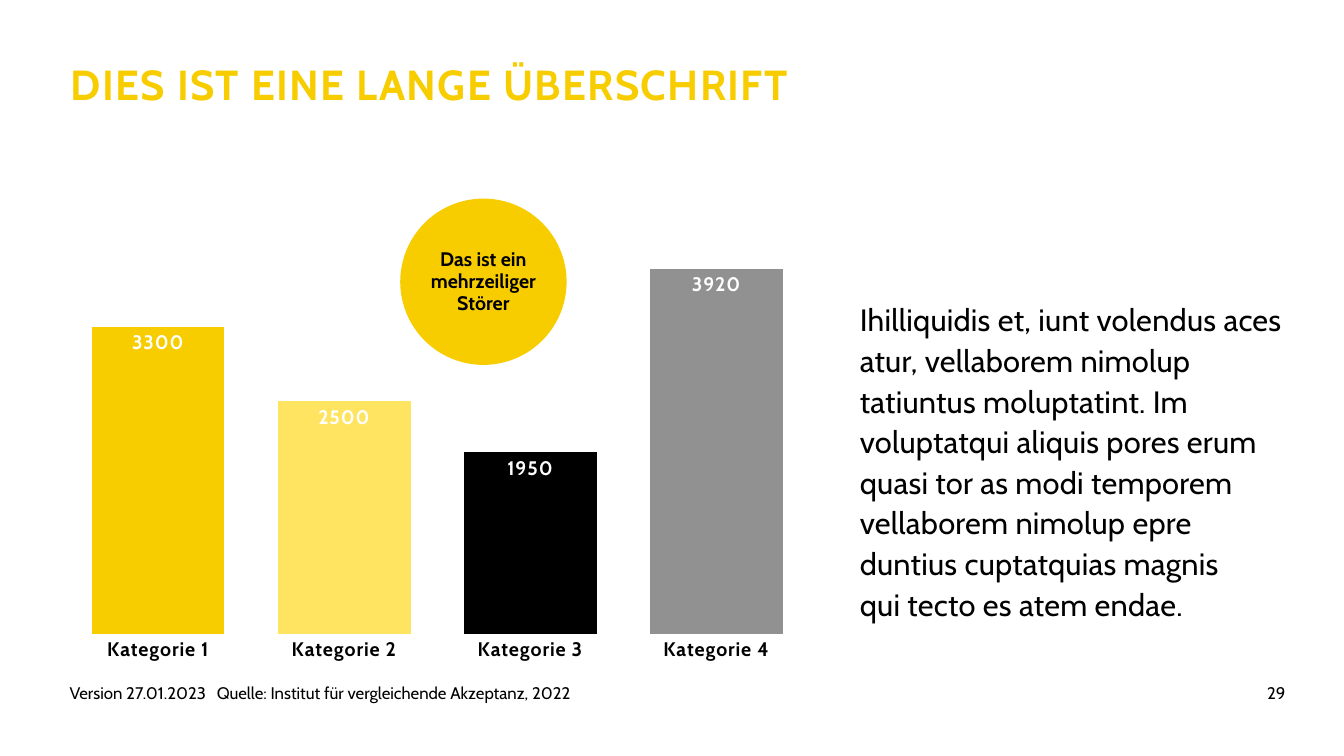
"""Build a slide with a column chart, a round callout and a text column."""
from lxml.etree import SubElement
from pptx import Presentation
from pptx.chart.data import CategoryChartData
from pptx.dml.color import RGBColor
from pptx.enum.chart import XL_CHART_TYPE, XL_LABEL_POSITION, XL_TICK_MARK
from pptx.enum.shapes import MSO_SHAPE
from pptx.enum.text import MSO_ANCHOR, MSO_AUTO_SIZE, PP_ALIGN
from pptx.oxml import parse_xml
from pptx.oxml.ns import nsdecls, qn
from pptx.util import Inches, Pt

YELLOW = RGBColor(0xF7, 0xCD, 0x00)
PALE = RGBColor(0xFF, 0xE4, 0x61)
BLACK = RGBColor(0x00, 0x00, 0x00)
GREY = RGBColor(0x91, 0x91, 0x91)
WHITE = RGBColor(0xFF, 0xFF, 0xFF)
FONT = "Cabin"
WIDE, HIGH = Inches(13.33), Inches(7.5)


def place(left, top, width, height):
    """Turn percentages of the slide into lengths."""
    return [int(part * side / 100) for part, side in
            zip((left, top, width, height), (WIDE, HIGH, WIDE, HIGH))]


def write(shape, text, size=12, color=BLACK, bold=False, align=PP_ALIGN.LEFT,
          anchor=MSO_ANCHOR.TOP, lines=1.0, track=0, tab=None):
    """Fill a shape with one formatted paragraph."""
    frame = shape.text_frame
    frame.word_wrap = True
    frame.auto_size = MSO_AUTO_SIZE.NONE
    frame.vertical_anchor = anchor
    frame.margin_left = frame.margin_right = 0
    frame.margin_top = frame.margin_bottom = 0
    para = frame.paragraphs[0]
    para.text = text
    para.alignment = align
    para.line_spacing = lines
    if tab:
        stops = SubElement(para._p.get_or_add_pPr(), qn("a:tabLst"))
        SubElement(stops, qn("a:tab"), pos=str(tab), algn="l")
    for run in para.runs:
        font = run.font
        font.name, font.size, font.bold = FONT, Pt(size), bold
        font.color.rgb = color
        run._r.get_or_add_rPr().set("spc", str(int(track * 100)))


deck = Presentation()
deck.slide_width, deck.slide_height = WIDE, HIGH
slide = deck.slides.add_slide(deck.slide_layouts[5])
shapes = slide.shapes

title = shapes.title
title.left, title.top, title.width, title.height = place(5.25, 8.8, 61.5, 14.93)
write(title, "DIES IST EINE LANGE ÜBERSCHRIFT", size=30, color=YELLOW,
      bold=True, lines=0.85, track=1)

data = CategoryChartData()
data.categories = [f"Kategorie {num}" for num in range(1, 5)]
data.add_series("Series 1", (3300, 2500, 1950, 3920))
chart = shapes.add_chart(XL_CHART_TYPE.COLUMN_CLUSTERED,
                         *place(3.68, 27.2, 57.69, 61.6), data).chart
chart.has_legend = chart.has_title = False
chart.font.name, chart.font.size = FONT, Pt(10)
chart.font.color.rgb = BLACK

scale = chart.value_axis
scale.minimum_scale, scale.maximum_scale = 0, 4500
scale.has_major_gridlines = False
scale.visible = False
names = chart.category_axis
names.major_tick_mark = XL_TICK_MARK.NONE
names.format.line.fill.background()

plot = chart.plots[0]
plot.gap_width, plot.overlap = 40, 100
plot.vary_by_categories = False
plot.has_data_labels = True
labels = plot.data_labels
labels.show_value = True
labels.position = XL_LABEL_POSITION.INSIDE_END
for font, color in ((names.tick_labels.font, BLACK), (labels.font, WHITE)):
    font.name, font.size, font.bold = FONT, Pt(14), True
    font.color.rgb = color
for props in chart._chartSpace.iter(qn("a:defRPr")):
    props.set("spc", "50")
for spot, color in enumerate((YELLOW, PALE, BLACK, GREY)):
    fill = plot.series[0].points[spot].format.fill
    fill.solid()
    fill.fore_color.rgb = color

area = chart._chartSpace.chart.plotArea
for old in area.findall(qn("c:layout")):
    area.remove(old)
area.insert(0, parse_xml(
    f'<c:layout {nsdecls("c")}><c:manualLayout><c:layoutTarget val="inner"/>'
    '<c:xMode val="edge"/><c:yMode val="edge"/><c:x val="0.02"/>'
    '<c:y val="0.02"/><c:w val="0.96"/><c:h val="0.9"/>'
    '</c:manualLayout></c:layout>'))

body = shapes.add_textbox(*place(63.98, 39.33, 31.58, 46.53))
write(body, "Ihilliquidis et, iunt volendus aces atur, vellaborem nimolup "
      "tatiuntus moluptatint. Im voluptatqui aliquis pores erum quasi tor as "
      "modi temporem vellaborem nimolup epre duntius cuptatquias magnis \n"
      "qui tecto es atem endae.", size=22, lines=1.1, track=0.2)

badge = shapes.add_shape(MSO_SHAPE.OVAL, *place(29.78, 26.27, 12.38, 22))
badge.shadow.inherit = False
badge.fill.solid()
badge.fill.fore_color.rgb = YELLOW
badge.line.fill.background()
write(badge, "Das ist ein mehrzeiliger Störer", size=14, bold=True,
      align=PP_ALIGN.CENTER, anchor=MSO_ANCHOR.MIDDLE, lines=0.95)

source = shapes.add_textbox(*place(5.18, 90.27, 61.74, 5.33))
write(source, "Version 27.01.2023\tQuelle: Institut für vergleichende "
      "Akzeptanz, 2022", tab=Inches(1.46))
number = shapes.add_textbox(*place(79.52, 90.27, 16.13, 5.33))
write(number, "29", align=PP_ALIGN.RIGHT)

deck.save("out.pptx")
